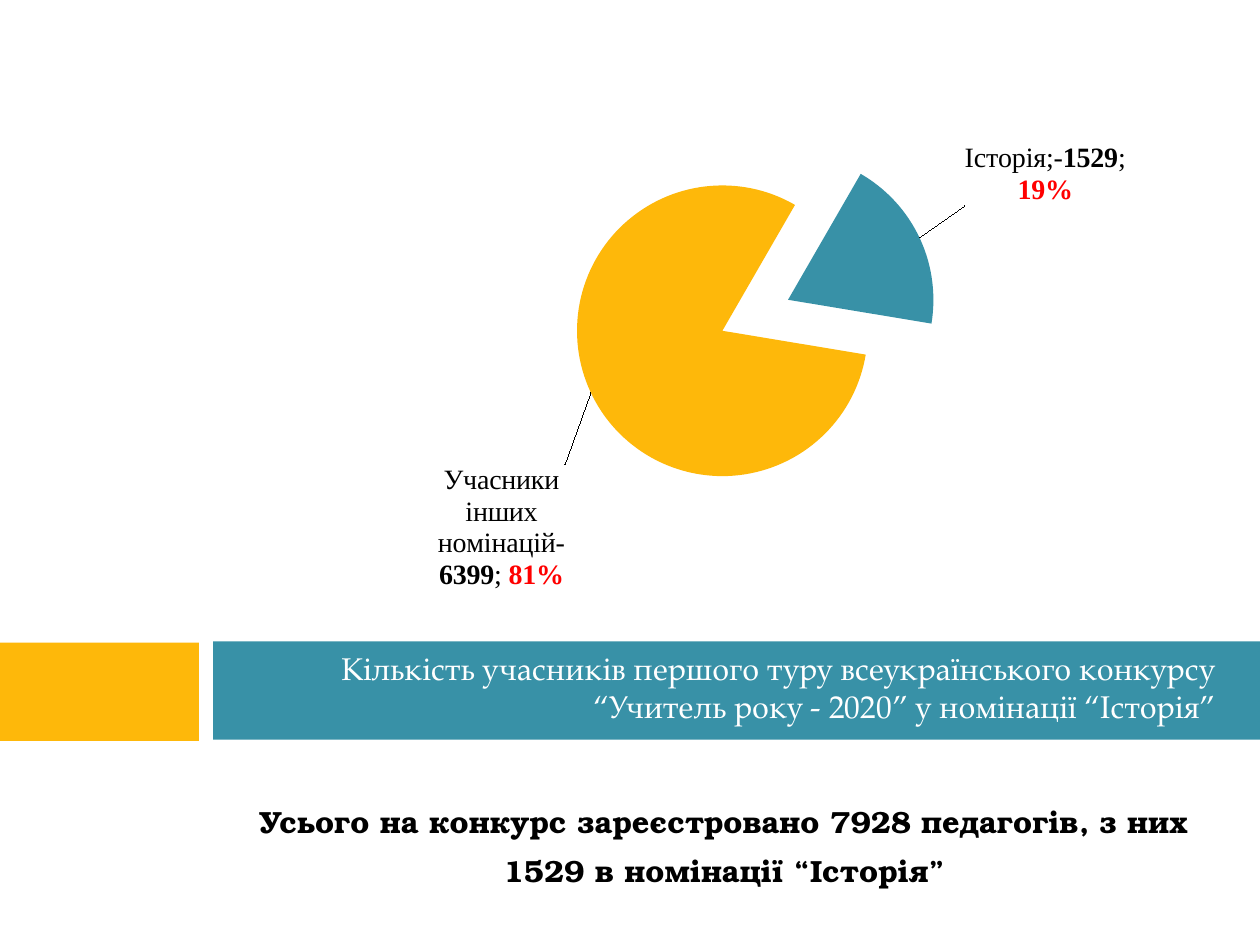
from lxml import etree
from pptx import Presentation
from pptx.chart.data import CategoryChartData
from pptx.dml.color import RGBColor
from pptx.enum.chart import XL_CHART_TYPE, XL_LABEL_POSITION
from pptx.enum.shapes import MSO_SHAPE
from pptx.enum.text import MSO_ANCHOR, MSO_AUTO_SIZE, PP_ALIGN
from pptx.oxml import parse_xml
from pptx.oxml.ns import nsdecls, qn
from pptx.util import Inches, Pt

PIE = XL_CHART_TYPE.PIE
BEST_FIT = XL_LABEL_POSITION.BEST_FIT
RECT = MSO_SHAPE.RECTANGLE
TOP, MIDDLE = MSO_ANCHOR.TOP, MSO_ANCHOR.MIDDLE
NO_FIT = MSO_AUTO_SIZE.NONE
CENTER, RIGHT = PP_ALIGN.CENTER, PP_ALIGN.RIGHT

GOLD = RGBColor(0xFE, 0xB8, 0x0A)
TEAL = RGBColor(0x38, 0x91, 0xA7)
WHITE = RGBColor(0xFF, 0xFF, 0xFF)
BLACK = RGBColor(0, 0, 0)
RED = RGBColor(0xFF, 0, 0)


def place(shape, left, top, width, height):
    shape.left, shape.top = Inches(left), Inches(top)
    shape.width, shape.height = Inches(width), Inches(height)


def add_run(para, text, font, size, color, bold=False):
    run = para.add_run()
    run.text = text
    run.font.name = font
    run.font.size = Pt(size)
    run.font.color.rgb = color
    run.font.bold = bold


def add_bar(slide, box, color):
    bar = slide.shapes.add_shape(RECT, *map(Inches, box))
    bar.shadow.inherit = False
    bar.fill.solid()
    bar.fill.fore_color.rgb = color
    bar.line.fill.background()


def fill_title(title):
    place(title, 1.75, 5.08, 8, 0.75)
    frame = title.text_frame
    frame.auto_size = NO_FIT
    frame.vertical_anchor = MIDDLE
    para = frame.paragraphs[0]
    para.alignment = RIGHT
    add_run(para, "Кількість учасників першого туру всеукраїнського конкурсу "
            "“Учитель року - 2020” у номінації “Історія”",
            "TeX Gyre Pagella", 18, WHITE)


def fill_body(body):
    place(body, 1.75, 6, 8, 1.03)
    frame = body.text_frame
    frame.auto_size = NO_FIT
    frame.vertical_anchor = TOP
    frame.margin_top = Inches(0.37)
    lines = ["Усього на конкурс зареєстровано 7928 педагогів, з них",
             "1529 в номінації “Історія”"]
    for i, line in enumerate(lines):
        para = frame.add_paragraph() if i else frame.paragraphs[0]
        para.alignment = CENTER
        para.space_before = Pt(7 if i else 0)
        props = para._p.get_or_add_pPr()
        props.set("marL", "0")
        props.set("indent", "0")
        etree.SubElement(props, qn("a:buNone"))
        add_run(para, line, "TeX Gyre Bonum", 17.5, BLACK, True)


def make_layout(**parts):
    """Build a manual chart layout from its child names and values."""
    inner = "".join(f'<c:{k} val="{v}"/>' for k, v in parts.items())
    return parse_xml(f'<c:layout {nsdecls("c")}><c:manualLayout>{inner}'
                     '</c:manualLayout></c:layout>')


def add_label(point, runs, dx, dy):
    """Write a point's label and shift it by fractions of the chart."""
    label = point.data_label
    para = label.text_frame.paragraphs[0]
    for text, color, bold in runs:
        add_run(para, text, "Times New Roman", 16, color, bold)
    label.position = BEST_FIT
    node = para._p.getparent().getparent().getparent()
    node.find(qn("c:idx")).addnext(make_layout(x=dx, y=dy))


def add_pie(slide):
    data = CategoryChartData()
    data.categories = ["Історія", "Учасники решти номінацій"]
    data.add_series("Series 1", [1529, 6399])
    box = map(Inches, (2.09, 0.36, 7.64, 4.55))
    chart = slide.shapes.add_chart(PIE, *box, data).chart
    chart.has_legend = False
    chart.has_title = False
    chart.font.name, chart.font.size = "Calibri", Pt(10)
    chart.font.color.rgb = BLACK

    plot = chart.plots[0]
    plot.vary_by_categories = False
    series = plot.series[0]
    pie = series._element.getparent()
    area = pie.getparent()
    for old in area.findall(qn("c:layout")):
        area.remove(old)
    area.insert(0, make_layout(layoutTarget="inner", xMode="edge",
                               yMode="edge", x=0.184, y=0.154,
                               w=0.654, h=0.634))
    etree.SubElement(pie, qn("c:firstSliceAng")).set("val", "30")
    burst = etree.Element(qn("c:explosion"), val="25")
    series._element.find(qn("c:tx")).addnext(burst)

    labels = series.data_labels
    labels.show_value = labels.show_percentage = True
    labels.show_category_name = True
    labels.position = BEST_FIT
    labels.font.name, labels.font.size = "Times New Roman", Pt(16)
    labels.font.color.rgb = BLACK

    slices = [
        (TEAL, [("Історія;-", BLACK, False), ("1529", BLACK, True),
                ("; ", BLACK, False), ("19%", RED, True)], 0.04, -0.05),
        (GOLD, [("Учасники інших номінацій- ", BLACK, False),
                ("6399", BLACK, True), ("; ", BLACK, False),
                ("81%", RED, True)], -0.02, 0.12),
    ]
    for i, (color, runs, dx, dy) in enumerate(slices):
        point = series.points[i]
        point.format.fill.solid()
        point.format.fill.fore_color.rgb = color
        add_label(point, runs, dx, dy)


def main():
    prs = Presentation()
    prs.slide_width, prs.slide_height = Inches(10), Inches(7.5)
    slide = prs.slides.add_slide(prs.slide_layouts[1])
    title, body = slide.shapes.title, slide.placeholders[1]
    add_bar(slide, (-0.01, 5.1, 1.6, 0.78), GOLD)
    add_bar(slide, (1.69, 5.09, 8.31, 0.78), TEAL)
    add_bar(slide, (1.58, 0, 0.11, 7.5), WHITE)
    fill_body(body)
    fill_title(title)
    for holder in (body, title):
        slide.shapes.element.append(holder.element)
    add_pie(slide)
    prs.save("out.pptx")


if __name__ == "__main__":
    main()
